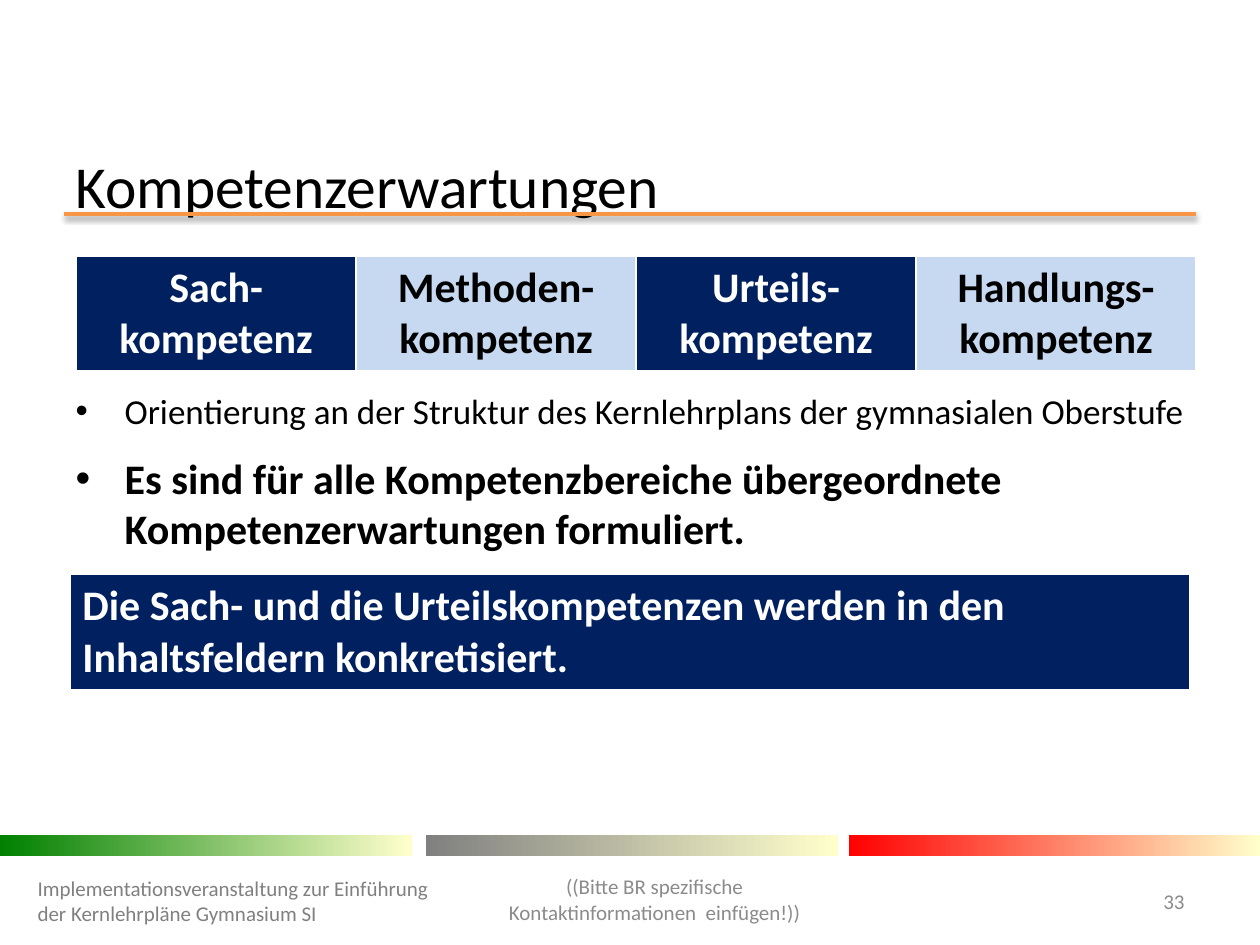
from lxml import etree
from pptx import Presentation
from pptx.dml.color import RGBColor
from pptx.enum.shapes import MSO_CONNECTOR, MSO_SHAPE
from pptx.enum.text import MSO_ANCHOR, MSO_AUTO_SIZE, PP_ALIGN
from pptx.oxml import parse_xml
from pptx.oxml.ns import nsdecls, qn
from pptx.util import Pt

LEFT, CENTER, RIGHT = PP_ALIGN.LEFT, PP_ALIGN.CENTER, PP_ALIGN.RIGHT
MIDDLE, TOP = MSO_ANCHOR.MIDDLE, MSO_ANCHOR.TOP
NO_FIT = MSO_AUTO_SIZE.NONE
RECT, STRAIGHT = MSO_SHAPE.RECTANGLE, MSO_CONNECTOR.STRAIGHT
FONT = "Calibri"
NAVY, PALE, WHITE, BLACK = "002060", "C6D9F1", "FFFFFF", "000000"
ORANGE, CREAM, GREY, LIGHT_GREY = "F79646", "FFFFCC", "808080", "8B8B8B"


def rgb(value):
    """Return the colour for a hex string."""
    return RGBColor.from_string(value)


def write(p, text, size=24, color=BLACK, bold=False, align=LEFT, before=0):
    """Write one formatted run into a paragraph."""
    p.alignment, p.space_before = align, Pt(before)
    r = p.add_run()
    r.text = text
    f = r.font
    f.name, f.size, f.bold = FONT, Pt(size), bold
    f.color.rgb = rgb(color)


def place(sp, x, y, w, h, anchor=MIDDLE):
    """Position a text shape and return its text frame."""
    sp.left, sp.top, sp.width, sp.height = Pt(x), Pt(y), Pt(w), Pt(h)
    tf = sp.text_frame
    tf.word_wrap, tf.auto_size, tf.vertical_anchor = True, NO_FIT, anchor
    return tf


def add_text(s, text, x, y, w, h, **fmt):
    """Add a text box with one paragraph."""
    sp = s.shapes.add_textbox(Pt(x), Pt(y), Pt(w), Pt(h))
    write(place(sp, x, y, w, h).paragraphs[0], text, **fmt)


def add_rule(s, x1, x2, y):
    """Add the title rule with its soft shadow."""
    cx = s.shapes.add_connector(STRAIGHT, Pt(x1), Pt(y), Pt(x2), Pt(y))
    cx.line.color.rgb, cx.line.width = rgb(ORANGE), Pt(2)
    effects = etree.SubElement(cx._element.spPr, qn("a:effectLst"))
    effects.append(parse_xml(
        f'<a:outerShdw {nsdecls("a")} blurRad="{Pt(3.1)}" dist="{Pt(1.6)}" '
        'dir="5400000" rotWithShape="0"><a:srgbClr val="000000">'
        '<a:alpha val="38000"/></a:srgbClr></a:outerShdw>'))


def add_gradient_bar(s, x, y, w, h, color):
    """Add a bar that fades from a colour to cream."""
    sp = s.shapes.add_shape(RECT, Pt(x), Pt(y), Pt(w), Pt(h))
    sp.shadow.inherit = False
    sp.line.fill.background()
    sp.fill.gradient()
    sp.fill.gradient_angle = 0
    for stop, value in zip(sp.fill.gradient_stops, (color, CREAM)):
        stop.color.rgb = rgb(value)


def add_band(s, x, y, w, h, cells, **fmt):
    """Add a one-row table from (text, fill, text colour) cells."""
    table = s.shapes.add_table(1, len(cells), Pt(x), Pt(y), Pt(w), Pt(h)).table
    table.horz_banding = False
    for cell, (text, fill, color) in zip(table.rows[0].cells, cells):
        cell.fill.solid()
        cell.fill.fore_color.rgb = rgb(fill)
        cell.vertical_anchor = MIDDLE
        write(cell.text_frame.paragraphs[0], text, color=color, bold=True, **fmt)


def add_bullets(tf, items, indent):
    """Fill a text frame with (text, size, bold) bullets."""
    for i, (text, size, bold) in enumerate(items):
        p = tf.add_paragraph() if i else tf.paragraphs[0]
        pPr = p._p.get_or_add_pPr()
        pPr.set("marL", str(Pt(indent)))
        pPr.set("indent", str(-Pt(indent)))
        etree.SubElement(pPr, qn("a:buChar")).set("char", "•")
        write(p, text, size=size, bold=bold, before=12 if i else 0)


def main():
    """Build the slide and save it."""
    prs = Presentation()
    prs.slide_width, prs.slide_height = Pt(720), Pt(540)
    s = prs.slides.add_slide(prs.slide_layouts[1])

    add_rule(s, 36.7, 683.3, 122.4)
    for x, color in ((0, "008000"), (243.4, GREY), (484.9, "FF0000")):
        add_gradient_bar(s, x, 477.4, 235.2, 11.5, color)

    title = place(s.shapes.title, 36, 88.6, 648, 33.8)
    write(title.paragraphs[0], "Kompetenzerwartungen", size=34)
    body = place(s.placeholders[1], 36, 219, 648, 246, TOP)
    add_bullets(body, (
        ("Orientierung an der Struktur des Kernlehrplans der gymnasialen Oberstufe",
         20, False),
        ("Es sind für alle Kompetenzbereiche übergeordnete "
         "Kompetenzerwartungen formuliert.", 24, True)), 28)

    areas = ("Sach", "Methoden", "Urteils", "Handlungs")
    schemes = ((NAVY, WHITE), (PALE, BLACK)) * 2
    add_band(s, 43.5, 146.2, 640, 64.8,
             [(f"{area}-kompetenz", *scheme) for area, scheme in zip(areas, schemes)],
             align=CENTER)
    add_band(s, 39.9, 328.3, 640, 64.8,
             [("Die Sach- und die Urteilskompetenzen werden in den "
               "Inhaltsfeldern konkretisiert.", NAVY, WHITE)])

    add_text(s, "Implementationsveranstaltung zur Einführung der Kernlehrpläne "
             "Gymnasium SI", 14.4, 500.4, 237.6, 28.8, size=12, color=GREY)
    add_text(s, "((Bitte BR spezifische Kontaktinformationen  einfügen!))",
             269.3, 488.2, 209.5, 51.1, size=12, color=LIGHT_GREY, align=CENTER)
    add_text(s, "33", 637.9, 500.4, 46.1, 28.8, size=12, color=LIGHT_GREY, align=RIGHT)
    prs.save("out.pptx")


if __name__ == "__main__":
    main()
